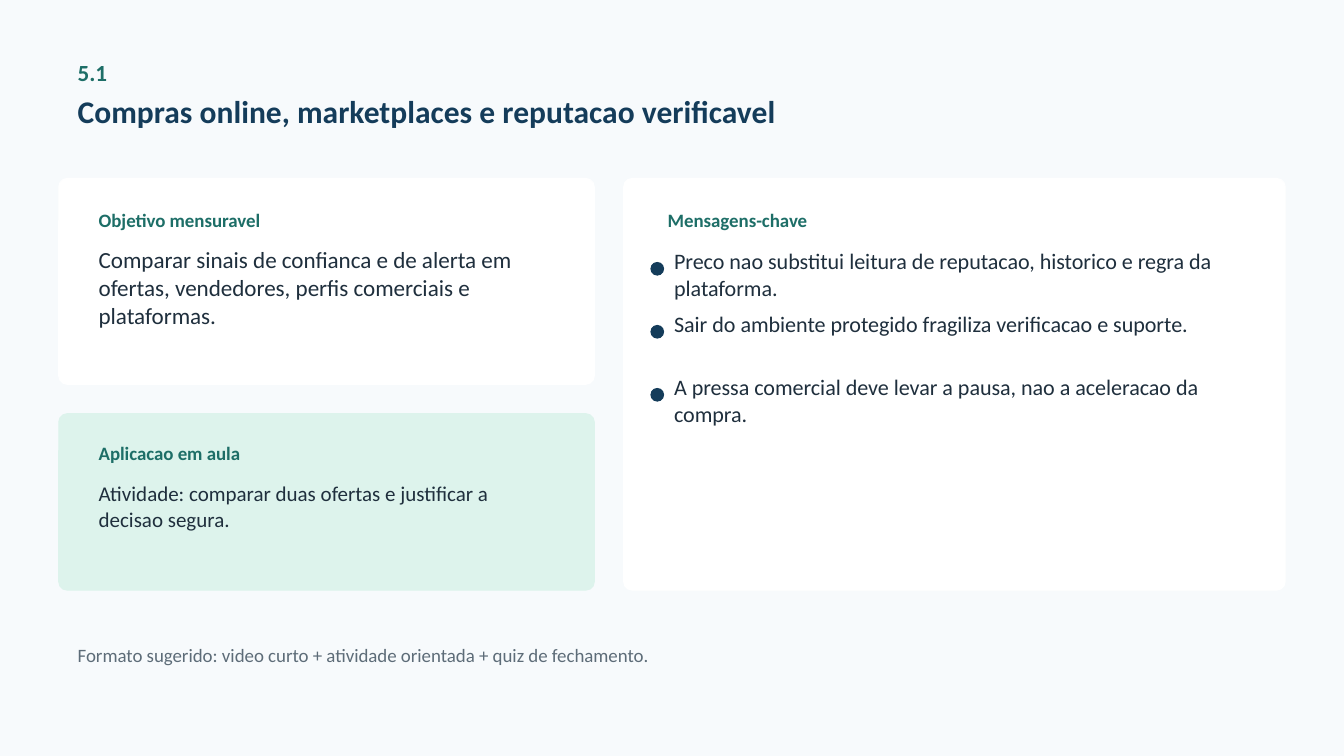
"""Build the lesson slide on online shopping and verifiable reputation."""
from dataclasses import dataclass

from pptx import Presentation
from pptx.dml.color import RGBColor
from pptx.enum.shapes import MSO_SHAPE
from pptx.enum.text import MSO_ANCHOR
from pptx.slide import Slide
from pptx.util import Pt

ROUNDED = MSO_SHAPE.ROUNDED_RECTANGLE
OVAL = MSO_SHAPE.OVAL
TOP = MSO_ANCHOR.TOP

EMU_PER_PX = 9525
FONT_NAME = "Calibri"
CORNER_RADIUS = 8
INSET_X, INSET_Y = 18, 14
COLORS = {
    "background": "F7FAFC",
    "white": "FFFFFF",
    "mint": "DDF3EC",
    "teal": "1D6E67",
    "navy": "143C5A",
    "ink": "1F2F3D",
    "gray": "5D6C78",
}


@dataclass(frozen=True)
class Box:
    left: int
    top: int
    width: int
    height: int

    def emu(self) -> tuple[int, int, int, int]:
        return (px(self.left), px(self.top), px(self.width), px(self.height))


@dataclass(frozen=True)
class Card:
    box: Box
    color: str


@dataclass(frozen=True)
class Label:
    text: str
    box: Box
    size: float
    color: str
    bold: bool = False
    inset_x: int = INSET_X
    inset_y: int = INSET_Y


CARDS = [
    Card(Box(56, 170, 510, 196), "white"),
    Card(Box(594, 170, 630, 392), "white"),
    Card(Box(56, 394, 510, 168), "mint"),
]
LABELS = [
    Label("5.1", Box(56, 42, 90, 40), 16.5, "teal", True),
    Label("Compras online, marketplaces e reputacao verificavel",
          Box(56, 74, 790, 84), 22.5, "navy", True),
    Label("Objetivo mensuravel", Box(76, 188, 220, 34), 13.5, "teal", True),
    Label("Comparar sinais de confianca e de alerta em ofertas, vendedores, "
          "perfis comerciais e plataformas.", Box(76, 220, 458, 120), 16.5, "ink"),
    Label("Mensagens-chave", Box(618, 188, 240, 34), 13.5, "teal", True),
    Label("Aplicacao em aula", Box(76, 410, 200, 30), 13.5, "teal", True),
    Label("Atividade: comparar duas ofertas e justificar a decisao segura.",
          Box(76, 444, 458, 94), 15, "ink"),
    Label("Formato sugerido: video curto + atividade orientada + quiz de fechamento.",
          Box(56, 602, 1180, 42), 13.5, "gray"),
]
KEY_MESSAGES = [
    "Preco nao substitui leitura de reputacao, historico e regra da plataforma.",
    "Sair do ambiente protegido fragiliza verificacao e suporte.",
    "A pressa comercial deve levar a pausa, nao a aceleracao da compra.",
]
MESSAGE_TOP, MESSAGE_PITCH = 236, 60


def px(length: int) -> int:
    return length * EMU_PER_PX


def rgb(color: str) -> RGBColor:
    return RGBColor.from_string(COLORS[color])


def apply_format(target: object, values: dict[str, object]) -> None:
    for name, value in values.items():
        setattr(target, name, value)


def draw_shape(slide: Slide, kind: MSO_SHAPE, box: Box, color: str) -> None:
    shape = slide.shapes.add_shape(kind, *box.emu())
    shape.shadow.inherit = False
    shape.fill.solid()
    shape.fill.fore_color.rgb = rgb(color)
    shape.line.color.rgb = rgb(color)
    shape.line.width = 0
    if kind == ROUNDED:
        shape.adjustments[0] = CORNER_RADIUS / min(box.width, box.height)


def draw_label(slide: Slide, label: Label) -> None:
    frame = slide.shapes.add_textbox(*label.box.emu()).text_frame
    apply_format(frame, {
        "word_wrap": True,
        "vertical_anchor": TOP,
        "margin_left": px(label.inset_x),
        "margin_right": px(label.inset_x),
        "margin_top": px(label.inset_y),
        "margin_bottom": px(label.inset_y),
    })
    run = frame.paragraphs[0].add_run()
    run.text = label.text
    apply_format(run.font, {"name": FONT_NAME, "size": Pt(label.size), "bold": label.bold})
    run.font.color.rgb = rgb(label.color)


def draw_key_messages(slide: Slide) -> None:
    for index, message in enumerate(KEY_MESSAGES):
        top = MESSAGE_TOP + index * MESSAGE_PITCH
        draw_shape(slide, OVAL, Box(620, top + 14, 12, 12), "navy")
        draw_label(slide, Label(message, Box(642, top, 548, 52), 15.75, "ink",
                                inset_x=0, inset_y=0))


def main() -> None:
    presentation = Presentation()
    presentation.slide_width = px(1280)
    presentation.slide_height = px(720)
    slide = presentation.slides.add_slide(presentation.slide_layouts[6])
    slide.background.fill.solid()
    slide.background.fill.fore_color.rgb = rgb("background")
    for card in CARDS:
        draw_shape(slide, ROUNDED, card.box, card.color)
    for label in LABELS:
        draw_label(slide, label)
    draw_key_messages(slide)
    presentation.save("out.pptx")


if __name__ == "__main__":
    main()
